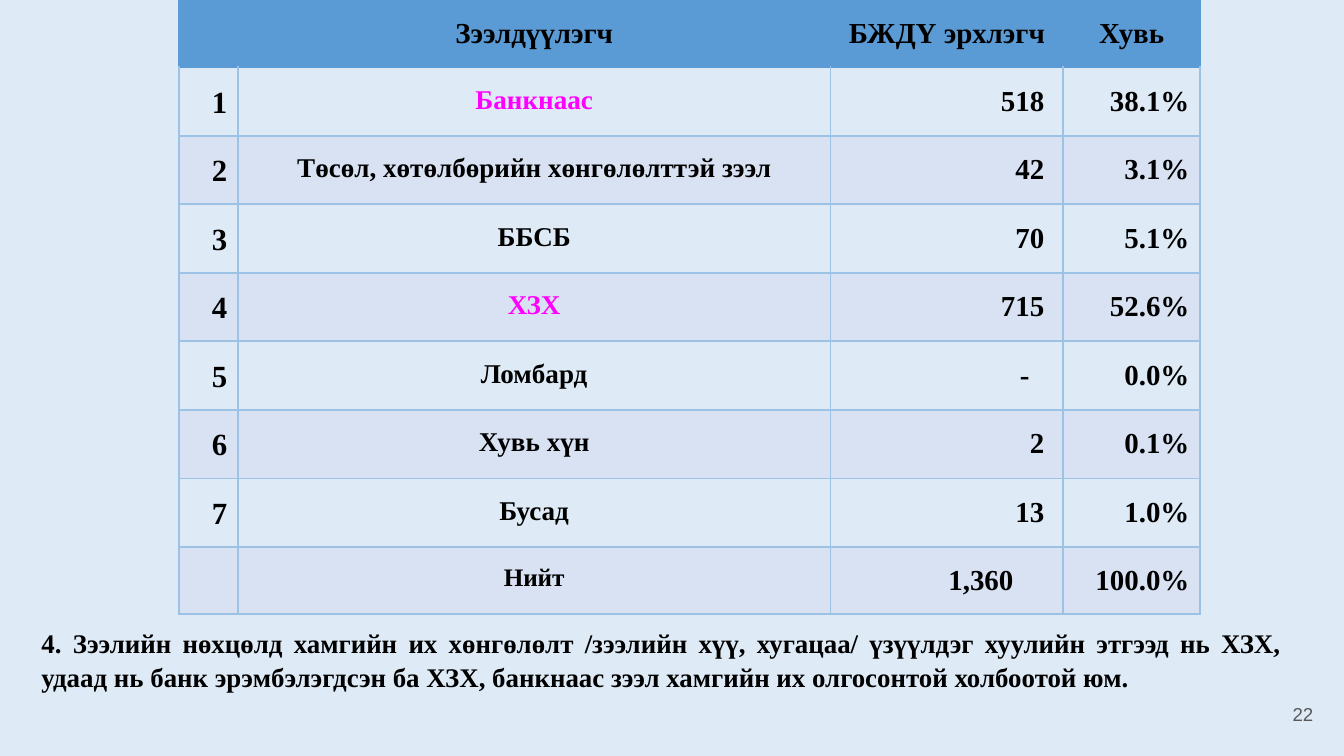
from lxml.etree import SubElement
from pptx import Presentation
from pptx.dml.color import RGBColor
from pptx.enum.text import MSO_ANCHOR, PP_ALIGN
from pptx.oxml.ns import qn
from pptx.util import Inches, Pt

COLORS = {
    "background": "DEEBF6",
    "header": "5B9BD5",
    "odd_row": "DEEBF6",
    "even_row": "D9E2F3",
    "border": "9CC3E5",
    "text": "000000",
    "highlight": "FF00FF",
    "page_number": "595959",
}
SERIF = "Times New Roman"

HEADERS = ["", "Зээлдүүлэгч", "БЖДҮ эрхлэгч", "Хувь"]
LENDERS = [
    ("1", "Банкнаас", "518", "38.1%"),
    ("2", "Төсөл, хөтөлбөрийн хөнгөлөлттэй зээл", "42", "3.1%"),
    ("3", "ББСБ", "70", "5.1%"),
    ("4", "ХЗХ", "715", "52.6%"),
    ("5", "Ломбард", "-", "0.0%"),
    ("6", "Хувь хүн", "2", "0.1%"),
    ("7", "Бусад", "13", "1.0%"),
    ("", "Нийт", "1,360", "100.0%"),
]
HIGHLIGHTED = {"Банкнаас", "ХЗХ"}
COLUMN_WIDTHS = [0.44, 4.41, 1.73, 1.02]
COLUMN_SIZES = [16.5, 14.5, 15.5, 15.5]
COLUMN_ALIGNS = [PP_ALIGN.RIGHT, PP_ALIGN.CENTER, PP_ALIGN.RIGHT, PP_ALIGN.RIGHT]
# Right margins of the count column: the dash and the total sit further in
COUNT_MARGIN = 0.14
COUNT_MARGINS = {"-": 0.25, "1,360": 0.37}
CONCLUSION = (
    "4. Зээлийн нөхцөлд хамгийн их хөнгөлөлт /зээлийн хүү, хугацаа/ үзүүлдэг "
    "хуулийн этгээд нь ХЗХ, удаад нь банк эрэмбэлэгдсэн ба ХЗХ, банкнаас зээл "
    "хамгийн их олгосонтой холбоотой юм."
)


def rgb(name):
    return RGBColor.from_string(COLORS[name])


def write_text(frame, text, size, align, color="text", font=SERIF, bold=True):
    frame.text = text
    paragraph = frame.paragraphs[0]
    paragraph.alignment = align
    for run in paragraph.runs:
        run.font.name = font
        run.font.size = Pt(size)
        run.font.bold = bold
        run.font.color.rgb = rgb(color)
    return paragraph


def set_borders(cell, color, top_color):
    properties = cell._tc.get_or_add_tcPr()
    for side in ("lnL", "lnR", "lnT", "lnB"):
        line = SubElement(properties, qn(f"a:{side}"), w=str(Pt(1)))
        fill = SubElement(line, qn("a:solidFill"))
        side_color = top_color if side == "lnT" else color
        SubElement(fill, qn("a:srgbClr"), val=COLORS[side_color])


def style_cell(cell, text, size, align, fill, border, top_border,
               color="text", right_margin=0.08):
    set_borders(cell, border, top_border)
    cell.fill.solid()
    cell.fill.fore_color.rgb = rgb(fill)
    cell.margin_left = Inches(0.08)
    cell.margin_right = Inches(right_margin)
    cell.margin_top = Inches(0.1)
    # A little less below the text keeps the rows at their set height
    cell.margin_bottom = Inches(0.09)
    write_text(cell.text_frame, text, size, align, color).line_spacing = 1.15


def add_lender_table(slide):
    row_count = len(LENDERS) + 1
    table = slide.shapes.add_table(
        row_count, len(HEADERS), Inches(1.33), Inches(0), Inches(7.6), Inches(4.57)
    ).table
    for column, width in zip(table.columns, COLUMN_WIDTHS):
        column.width = Inches(width)
    for index, row in enumerate(table.rows):
        row.height = Inches(0.5 if index in (0, row_count - 1) else 0.51)

    # Header row
    for column, heading in enumerate(HEADERS):
        style_cell(table.cell(0, column), heading, 15.5, PP_ALIGN.CENTER,
                   "header", "header", "header")
    table.cell(0, 3).margin_bottom = 0

    # Lender rows and total
    for row, values in enumerate(LENDERS, start=1):
        for column, value in enumerate(values):
            style_cell(
                table.cell(row, column), value,
                13.5 if value == "Нийт" else COLUMN_SIZES[column],
                COLUMN_ALIGNS[column],
                "odd_row" if row % 2 else "even_row",
                "border", "header" if row == 1 else "border",
                "highlight" if value in HIGHLIGHTED else "text",
                COUNT_MARGINS.get(value, COUNT_MARGIN) if column == 2 else 0.08,
            )


def add_text_box(slide, left, top, width, height, anchor=MSO_ANCHOR.TOP):
    frame = slide.shapes.add_textbox(
        Inches(left), Inches(top), Inches(width), Inches(height)).text_frame
    frame.word_wrap = True
    frame.vertical_anchor = anchor
    frame.margin_left = frame.margin_right = Inches(0.1)
    frame.margin_top = frame.margin_bottom = Inches(0.1)
    return frame


def main():
    presentation = Presentation()
    # Widescreen, 16:9
    presentation.slide_width = Inches(10)
    presentation.slide_height = Inches(10) * 9 // 16
    # The slide has no title, so it uses the blank layout
    slide = presentation.slides.add_slide(presentation.slide_layouts[6])
    slide.background.fill.solid()
    slide.background.fill.fore_color.rgb = rgb("background")

    # Conclusion below the table
    conclusion_frame = add_text_box(slide, 0.21, 4.55, 9.42, 1.07)
    conclusion = write_text(conclusion_frame, CONCLUSION, 14.4, PP_ALIGN.JUSTIFY)
    conclusion.line_spacing = 1.05
    conclusion.space_before = conclusion.space_after = Pt(12)

    # Page number
    page_frame = add_text_box(slide, 9.27, 5.1, 0.6, 0.43, MSO_ANCHOR.MIDDLE)
    write_text(page_frame, "22", 10, PP_ALIGN.RIGHT, "page_number", "Arial", False)

    add_lender_table(slide)
    presentation.save("out.pptx")


if __name__ == "__main__":
    main()
